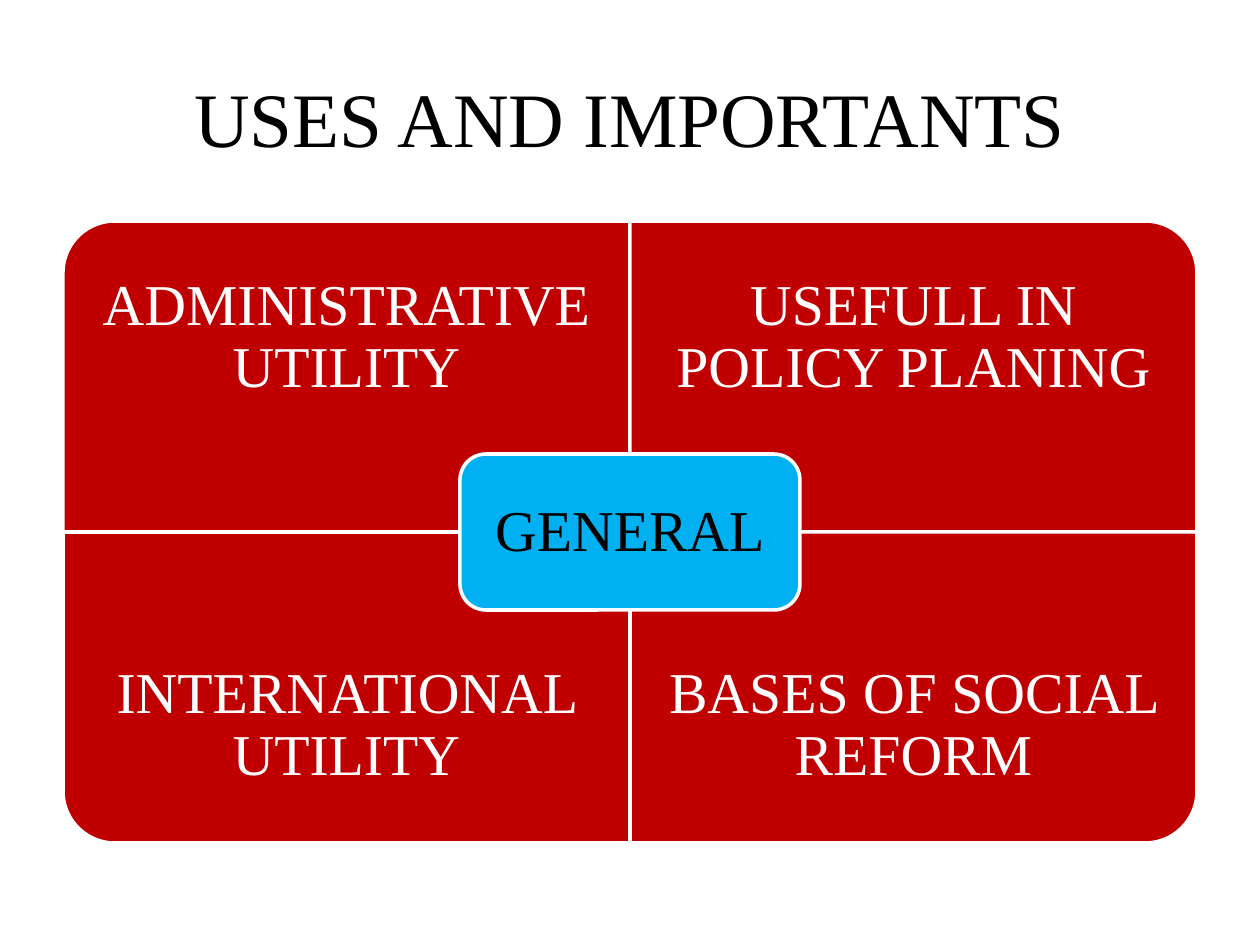
from pptx import Presentation
from pptx.dml.color import RGBColor
from pptx.enum.shapes import MSO_SHAPE as Shape
from pptx.enum.text import MSO_ANCHOR as Anchor, PP_ALIGN as Align
from pptx.util import Emu, Pt

SCALE = 914400 / 126
RED = RGBColor(0xC0, 0x00, 0x00)
BLUE = RGBColor(0x00, 0xB0, 0xF0)
WHITE = RGBColor(0xFF, 0xFF, 0xFF)
BLACK = RGBColor(0x00, 0x00, 0x00)

presentation = Presentation()
presentation.slide_width = Emu(9144000)
presentation.slide_height = Emu(6858000)
slide = presentation.slides.add_slide(presentation.slide_layouts[6])


def add_panel(kind, box, color, rotation=0):
    shape = slide.shapes.add_shape(kind, *[Emu(round(px * SCALE)) for px in box])
    shape.shadow.inherit = False
    shape.rotation = rotation
    shape.fill.solid()
    shape.fill.fore_color.rgb = color
    shape.line.color.rgb = WHITE
    shape.line.width = Pt(2)


def add_label(text, box, size, color, inset, spacing):
    label = slide.shapes.add_textbox(*[Emu(round(px * SCALE)) for px in box])
    frame = label.text_frame
    frame.word_wrap = True
    frame.vertical_anchor = Anchor.MIDDLE
    for side in ("left", "top", "right", "bottom"):
        setattr(frame, f"margin_{side}", Emu(round(inset * SCALE)))
    paragraph = frame.paragraphs[0]
    paragraph.text = text
    paragraph.alignment = Align.CENTER
    paragraph.line_spacing = spacing
    font_format = {"name": "Times New Roman", "size": Pt(size)}
    for name, value in font_format.items():
        setattr(paragraph.runs[0].font, name, value)
    paragraph.runs[0].font.color.rgb = color


add_label("USES AND IMPORTANTS", (63, 38, 1134, 158), 44, BLACK, 6, 1.0)

LEFT, TOP, WIDTH, HEIGHT = 63, 221, 567, 311
LABEL_HEIGHT = 234
quadrants = [
    ("ADMINISTRATIVE UTILITY", 0, 0, 270),
    ("USEFULL IN POLICY PLANING", 1, 0, 0),
    ("INTERNATIONAL UTILITY", 0, 1, 180),
    ("BASES OF SOCIAL REFORM", 1, 1, 90),
]
for text, column, row, rotation in quadrants:
    left = LEFT + column * WIDTH
    top = TOP + row * HEIGHT
    box = (left, top, WIDTH, HEIGHT)
    if rotation in (90, 270):
        shift = (WIDTH - HEIGHT) // 2
        box = (left + shift, top - shift, HEIGHT, WIDTH)
    add_panel(Shape.ROUND_1_RECTANGLE, box, RED, rotation)
    label_top = top + row * (HEIGHT - LABEL_HEIGHT)
    add_label(text, (left, label_top, WIDTH, LABEL_HEIGHT), 33, WHITE, 33, 0.9)

add_panel(Shape.ROUNDED_RECTANGLE, (460, 454, 340, 156), BLUE)
add_label("GENERAL", (467, 462, 326, 141), 33, BLACK, 18, 0.9)

presentation.save("out.pptx")
